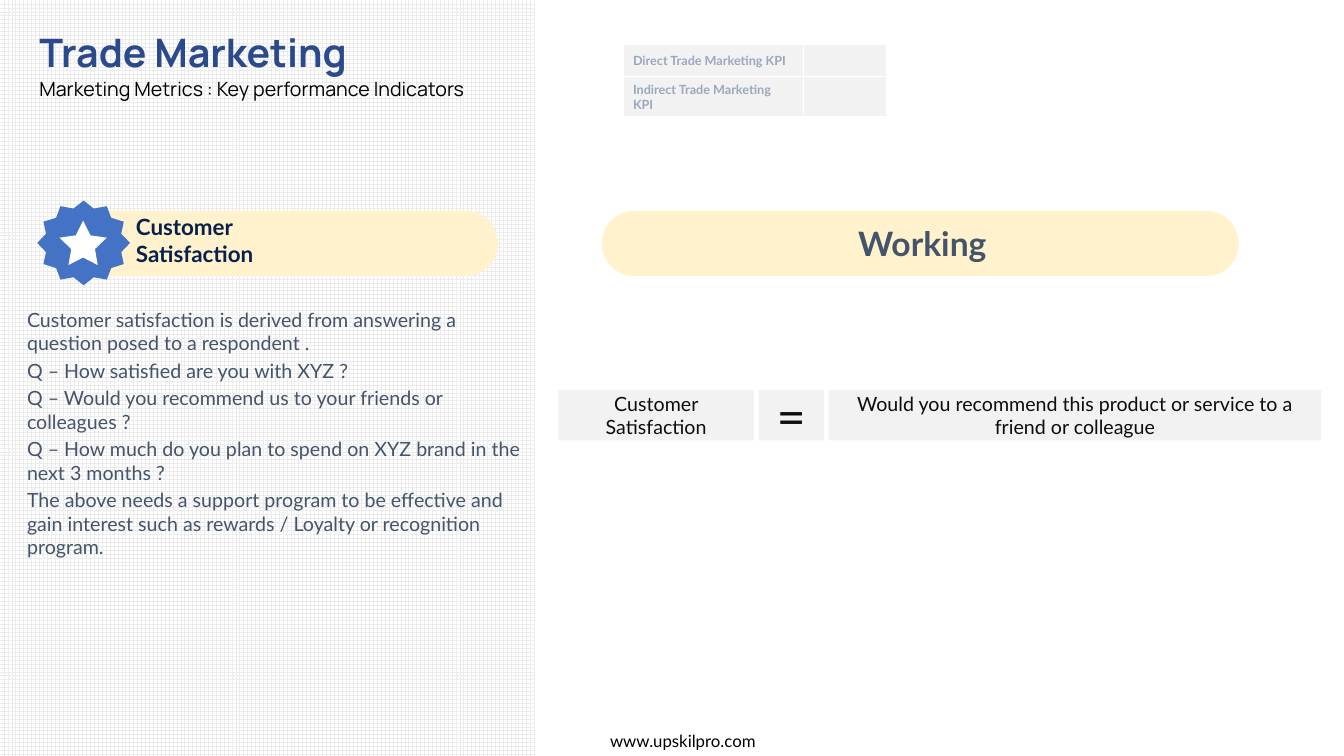
from dataclasses import dataclass
from typing import NamedTuple

from lxml import etree
from pptx import Presentation
from pptx.dml.color import RGBColor
from pptx.enum.dml import MSO_PATTERN
from pptx.enum.shapes import MSO_SHAPE
from pptx.enum.text import MSO_ANCHOR, PP_ALIGN
from pptx.oxml.ns import qn
from pptx.util import Inches, Pt

RECT, PILL = MSO_SHAPE.RECTANGLE, MSO_SHAPE.ROUNDED_RECTANGLE
SEAL, STAR = MSO_SHAPE.STAR_12_POINT, MSO_SHAPE.STAR_5_POINT
GRID = MSO_PATTERN.LARGE_GRID
LEFT, CENTER = PP_ALIGN.LEFT, PP_ALIGN.CENTER
TOP, MIDDLE, BOTTOM = MSO_ANCHOR.TOP, MSO_ANCHOR.MIDDLE, MSO_ANCHOR.BOTTOM

WIDE, HIGH = Inches(13.33), Inches(7.5)
COLS, ROWS = 80, 45


class Face(NamedTuple):
    size: float
    color: str
    bold: bool = False
    name: str = "Lato"


@dataclass(frozen=True)
class Theme:
    white: str = "FFFFFF"
    mesh: str = "ECECEC"
    gray: str = "F2F2F2"
    cream: str = "FFF2CC"
    blue: str = "4472C4"
    title: Face = Face(28, "2A4A8B", True, "Manrope")
    sub: Face = Face(14, "000000", False, "Manrope")
    body: Face = Face(14, "44546A")
    head: Face = Face(24, "44546A", True)
    label: Face = Face(16, "08204D", True)
    term: Face = Face(14, "0D0D0D")
    sign: Face = Face(36, "0D0D0D")
    cell: Face = Face(9, "99A8BD", True)
    link: Face = Face(12, "000000")


class Box(NamedTuple):
    """A place in grid columns (x, w) and rows (y, h)."""
    x: float
    y: float
    w: float
    h: float


class Shape(NamedTuple):
    kind: MSO_SHAPE
    box: Box
    fill: str
    adjust: tuple = ()


class Term(NamedTuple):
    text: str
    width: float
    face: Face


THEME = Theme()
BAND_Y, BAND_H = 12.54, 3.9
BADGE = (
    Shape(PILL, Box(3.12, BAND_Y, 26.52, BAND_H), THEME.cream, (0.5,)),
    Shape(SEAL, Box(2.22, 11.94, 5.52, 5.04), THEME.blue, (0.42,)),
    Shape(STAR, Box(3.54, 13.14, 2.82, 2.64), THEME.white, (0.25,)),
)
WORK = Shape(PILL, Box(35.82, BAND_Y, 37.92, BAND_H), THEME.cream, (0.5,))
BODY = (
    "Customer satisfaction is derived from answering a question posed to a respondent .",
    "Q – How satisfied are you with XYZ ?",
    "Q – Would you recommend us to your friends or colleagues ?",
    "Q – How much do you plan to spend on XYZ brand in the next 3 months ?",
    "The above needs a support program to be effective and gain interest "
    "such as rewards / Loyalty or recognition program.",
)
TERMS = (
    Term("Customer Satisfaction", 11.64, THEME.term),
    Term("=", 3.9, THEME.sign),
    Term("Would you recommend this product or service to a friend or colleague", 29.34, THEME.term),
)
TERM_X, TERM_Y, TERM_H, TERM_GAP = 33.24, 23.22, 3, 0.27
KPIS = ("Direct Trade Marketing KPI", "Indirect Trade Marketing KPI")
KPI_COLS, KPI_ROW = (10.74, 4.98), 1.92


def col(count: float) -> int:
    return round(WIDE * count / COLS)


def row(count: float) -> int:
    return round(HIGH * count / ROWS)


def spot(box: Box) -> tuple:
    return col(box.x), row(box.y), col(box.w), row(box.h)


def write(para, text: str, face: Face, align=LEFT) -> None:
    para.alignment = align
    run = para.add_run()
    run.text = text
    form = {"name": face.name, "size": Pt(face.size), "bold": face.bold}
    for key, value in form.items():
        setattr(run.font, key, value)
    run.font.color.rgb = RGBColor.from_string(face.color)


def paint(fill, color: str) -> None:
    fill.solid()
    fill.fore_color.rgb = RGBColor.from_string(color)


def draw(slide, item: Shape):
    shape = slide.shapes.add_shape(item.kind, *spot(item.box))
    shape.shadow.inherit = False
    shape.line.fill.background()
    paint(shape.fill, item.fill)
    for i, value in enumerate(item.adjust):
        shape.adjustments[i] = value
    return shape


def note(slide, box: Box, lines: tuple, face: Face, align=LEFT, anchor=TOP, gap: float = 0):
    frame = slide.shapes.add_textbox(*spot(box)).text_frame
    frame.word_wrap = True
    frame.vertical_anchor = anchor
    for i, line in enumerate(lines):
        para = frame.add_paragraph() if i else frame.paragraphs[0]
        if i:
            para.space_before = Pt(gap)
        write(para, line, face, align)
    return frame


def panel(slide) -> None:
    fill = draw(slide, Shape(RECT, Box(0, 0, 31.86, ROWS), THEME.white)).fill
    fill.patterned()
    fill.pattern = GRID
    fill.fore_color.rgb = RGBColor.from_string(THEME.mesh)
    fill.back_color.rgb = RGBColor.from_string(THEME.white)


def heading(slide) -> None:
    title = slide.shapes.title
    title.element.getparent().append(title.element)  # bring in front of the panel
    place = zip(("left", "top", "width", "height"), spot(Box(1.74, 1.38, 52.2, 4.92)))
    for key, value in place:
        setattr(title, key, value)
    frame = title.text_frame
    frame.word_wrap = True
    frame.vertical_anchor = TOP
    write(frame.paragraphs[0], "Trade Marketing", THEME.title)
    sub = frame.add_paragraph()
    sub.line_spacing = 1.07
    sub.space_before, sub.space_after = Pt(0), Pt(8)
    write(sub, "Marketing Metrics : Key performance Indicators", THEME.sub)


def formula(slide) -> None:
    x = TERM_X
    for term in TERMS:
        shape = draw(slide, Shape(RECT, Box(x, TERM_Y, term.width, TERM_H), THEME.gray))
        frame = shape.text_frame
        frame.word_wrap = True
        frame.vertical_anchor = MIDDLE
        write(frame.paragraphs[0], term.text, term.face, CENTER)
        x += term.width + TERM_GAP


def edge(cell) -> None:
    """Give a cell thin white borders."""
    props = cell._tc.get_or_add_tcPr()
    for i, tag in enumerate(("a:lnL", "a:lnR", "a:lnT", "a:lnB")):
        line = etree.Element(qn(tag), w=str(Pt(1)))
        solid = etree.SubElement(line, qn("a:solidFill"))
        etree.SubElement(solid, qn("a:srgbClr"), val=THEME.white)
        props.insert(i, line)


def kpis(slide) -> None:
    box = Box(37.08, 2.64, sum(KPI_COLS), KPI_ROW * len(KPIS))
    table = slide.shapes.add_table(len(KPIS), len(KPI_COLS), *spot(box)).table
    table.first_row = table.horz_banding = False
    for i, width in enumerate(KPI_COLS):
        table.columns[i].width = col(width)
    for i, name in enumerate(KPIS):
        table.rows[i].height = row(KPI_ROW)
        for cell in table.rows[i].cells:
            paint(cell.fill, THEME.gray)
            edge(cell)
            cell.vertical_anchor = MIDDLE
        write(table.cell(i, 0).text_frame.paragraphs[0], name, THEME.cell)
        blank = table.cell(i, 1).text_frame.paragraphs[0]
        etree.SubElement(blank._p, qn("a:endParaRPr"), sz=str(THEME.cell.size * 100))


def main() -> None:
    deck = Presentation()
    deck.slide_width, deck.slide_height = WIDE, HIGH
    slide = deck.slides.add_slide(deck.slide_layouts[5])
    panel(slide)
    body = note(slide, Box(1.02, 16.38, 30.84, 19.26), BODY, THEME.body, gap=2.8)
    body.margin_top = row(1.92)
    draw(slide, WORK)
    note(slide, Box(37.44, 12.96, 34.92, 3), ("Working",), THEME.head, CENTER, BOTTOM)
    for item in BADGE:
        draw(slide, item)
    note(slide, Box(7.5, 13.2, 13.74, 2.22), ("Customer Satisfaction",), THEME.label, anchor=MIDDLE)
    formula(slide)
    heading(slide)
    note(slide, Box(32.4, 43.2, 16.5, 1.8), ("www.upskilpro.com",), THEME.link, CENTER)
    kpis(slide)
    deck.save("out.pptx")


if __name__ == "__main__":
    main()
